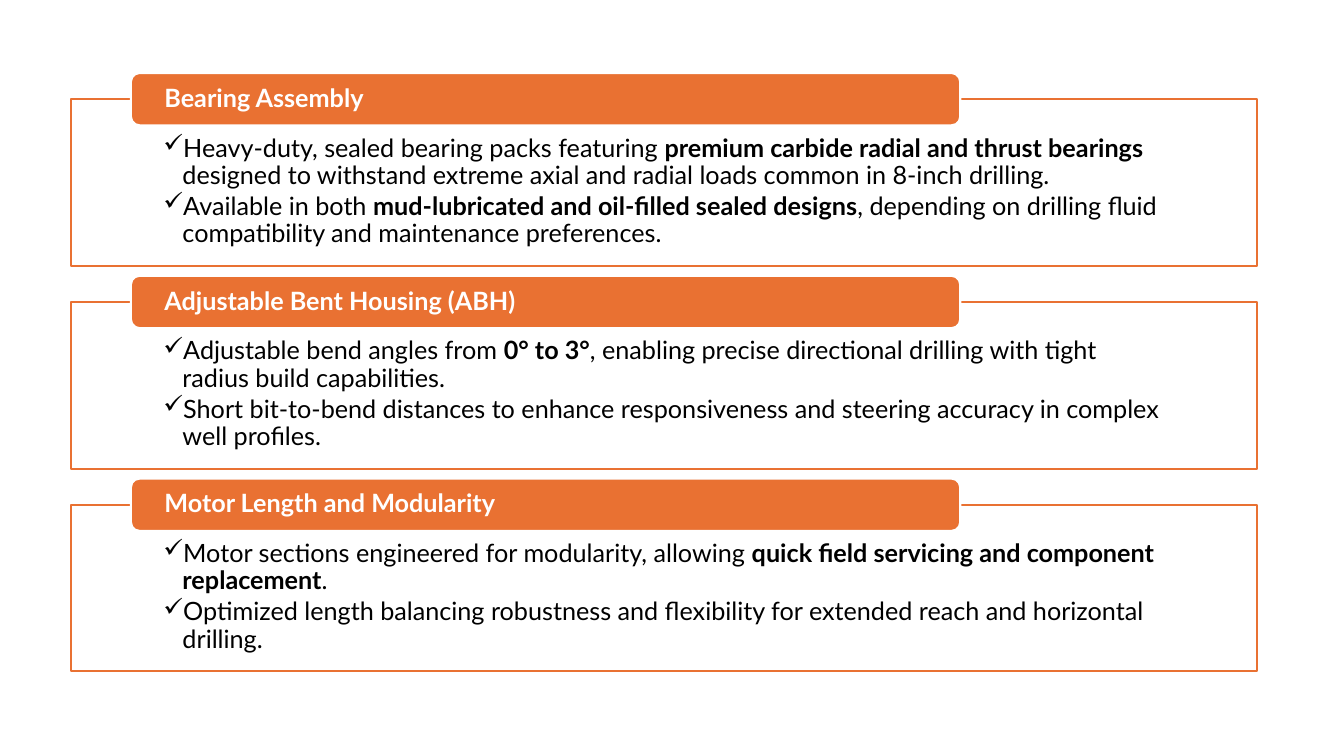
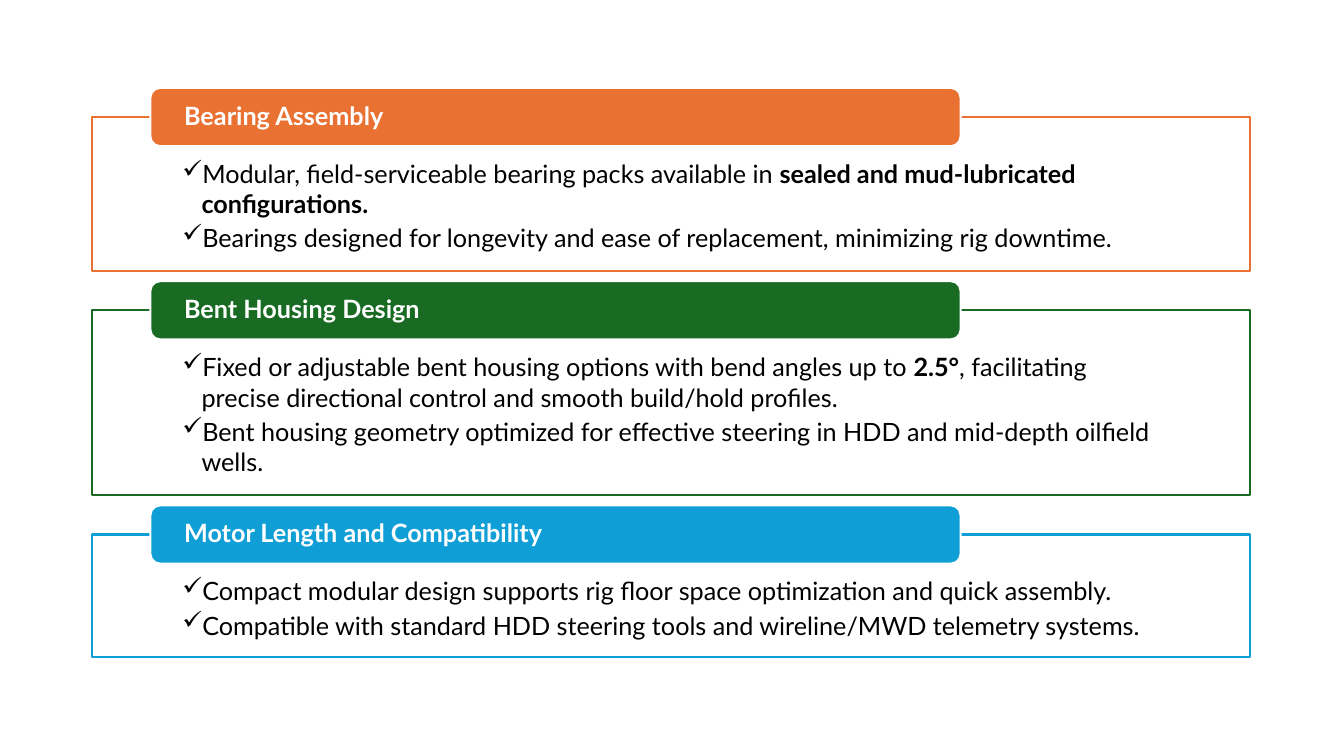
from lxml import etree
from pptx import Presentation
from pptx import util as u
from pptx.dml.color import RGBColor
from pptx.enum import shapes, text
from pptx.oxml.ns import qn

ORANGE, GREEN, BLUE = "E97132", "196B24", "0F9ED5"
WHITE, BLACK = "FFFFFF", "000000"


def color(code):
    return RGBColor.from_string(code)


class SectionDeck:
    """Slides of outlined sections, each with a title tab on its top edge."""

    font, size = "Lato", 18
    line_width = 1.5
    tab_inset = 0.78
    bullet, bullet_indent = "✓", 0.48

    def __init__(self):
        self.deck = Presentation()
        self.deck.slide_width, self.deck.slide_height = u.Cm(33.87), u.Cm(19.05)
        self.page = None

    def new_page(self):
        self.page = self.deck.slides.add_slide(self.deck.slide_layouts[6])

    def shape(self, kind, left, top, width, height, fill, line):
        shape = self.page.shapes.add_shape(
            kind, u.Cm(left), u.Cm(top), u.Cm(width), u.Cm(height))
        shape.shadow.inherit = False
        shape.fill.solid()
        shape.fill.fore_color.rgb = color(fill)
        shape.line.color.rgb = color(line)
        shape.line.width = u.Pt(self.line_width)
        return shape

    def frame(self, shape, anchor, side, top=0, bottom=0):
        frame = shape.text_frame
        frame.word_wrap = True
        frame.vertical_anchor = anchor
        frame.margin_left = frame.margin_right = u.Cm(side)
        frame.margin_top, frame.margin_bottom = u.Cm(top), u.Cm(bottom)
        return frame

    def add_words(self, para, content, code, spacing):
        """Fill a paragraph; parts between ** marks are bold."""
        para.alignment = text.PP_ALIGN.LEFT
        para.line_spacing = spacing
        for index, part in enumerate(content.split("**")):
            if part:
                span = para.add_run()
                span.text = part
                span.font.name, span.font.size = self.font, u.Pt(self.size)
                span.font.bold = index % 2 == 1
                span.font.color.rgb = color(code)

    def add_bullet(self, para):
        para.level = 1
        para.space_after = u.Pt(0.15 * self.size)
        properties = para._p.get_or_add_pPr()
        indent = u.Cm(self.bullet_indent)
        properties.set("marL", str(indent))
        properties.set("indent", str(-indent))
        etree.SubElement(properties, qn("a:buChar")).set("char", self.bullet)

    def body(self, layout, top, height, accent, points):
        box = self.shape(shapes.MSO_SHAPE.RECTANGLE, layout["left"], top,
                         layout["width"], height, WHITE, accent)
        frame = self.frame(box, text.MSO_ANCHOR.TOP, layout["side_inset"],
                           layout["top_inset"], 0.36)
        for index, point in enumerate(points):
            para = frame.add_paragraph() if index else frame.paragraphs[0]
            self.add_words(para, point, BLACK, layout["spacing"])
            self.add_bullet(para)

    def tab(self, layout, middle, accent, title):
        height = layout["tab_height"]
        tab = self.shape(shapes.MSO_SHAPE.ROUNDED_RECTANGLE, layout["tab_left"],
                         middle - height / 2, layout["tab_width"], height,
                         accent, WHITE)
        frame = self.frame(tab, text.MSO_ANCHOR.MIDDLE, self.tab_inset)
        self.add_words(frame.paragraphs[0], f"**{title}**", WHITE, 0.9)

    def sections(self, layout, sections):
        """Stack the sections down the page with equal gaps."""
        self.new_page()
        top = layout["top"]
        for title, accent, height, points in sections:
            self.body(layout, top, height, accent, points)
            self.tab(layout, top, accent, title)
            top += height + layout["gap"]


# Slide measures in centimetres
WIDE = dict(left=1.8, top=2.5, width=29.87, gap=0.91, side_inset=2.32,
            top_inset=0.91, spacing=0.9,
            tab_left=3.3, tab_width=20.9, tab_height=1.32)
NARROW = dict(left=2.33, top=2.95, width=29.18, gap=1, side_inset=2.27,
              top_inset=1.04, spacing=1.0,
              tab_left=3.79, tab_width=20.42, tab_height=1.47)

# Sections: title, accent, height, bullet points
HEAVY_DUTY = [
    ("Bearing Assembly", ORANGE, 4.2, [
        "Heavy-duty, sealed bearing packs featuring **premium carbide radial and "
        "thrust bearings** designed to withstand extreme axial and radial loads "
        "common in 8-inch drilling.",
        "Available in both **mud-lubricated and oil-filled sealed designs**, "
        "depending on drilling fluid compatibility and maintenance preferences."]),
    ("Adjustable Bent Housing (ABH)", ORANGE, 4.2, [
        "Adjustable bend angles from **0° to 3°**, enabling precise directional "
        "drilling with tight radius build capabilities.",
        "Short bit-to-bend distances to enhance responsiveness and steering "
        "accuracy in complex well profiles."]),
    ("Motor Length and Modularity", ORANGE, 4.2, [
        "Motor sections engineered for modularity, allowing **quick field "
        "servicing and component replacement**.",
        "Optimized length balancing robustness and flexibility for extended "
        "reach and horizontal drilling."]),
]
COMPACT = [
    ("Bearing Assembly", ORANGE, 3.87, [
        "Modular, field-serviceable bearing packs available in **sealed and "
        "mud-lubricated configurations.**",
        "Bearings designed for longevity and ease of replacement, minimizing "
        "rig downtime."]),
    ("Bent Housing Design", GREEN, 4.65, [
        "Fixed or adjustable bent housing options with bend angles up to "
        "**2.5°**, facilitating precise directional control and smooth "
        "build/hold profiles.",
        "Bent housing geometry optimized for effective steering in HDD and "
        "mid-depth oilfield wells."]),
    ("Motor Length and Compatibility", BLUE, 3.08, [
        "Compact modular design supports rig floor space optimization and "
        "quick assembly.",
        "Compatible with standard HDD steering tools and wireline/MWD "
        "telemetry systems."]),
]


def main():
    builder = SectionDeck()
    builder.sections(WIDE, HEAVY_DUTY)
    builder.sections(NARROW, COMPACT)
    builder.deck.save("out.pptx")


if __name__ == "__main__":
    main()
